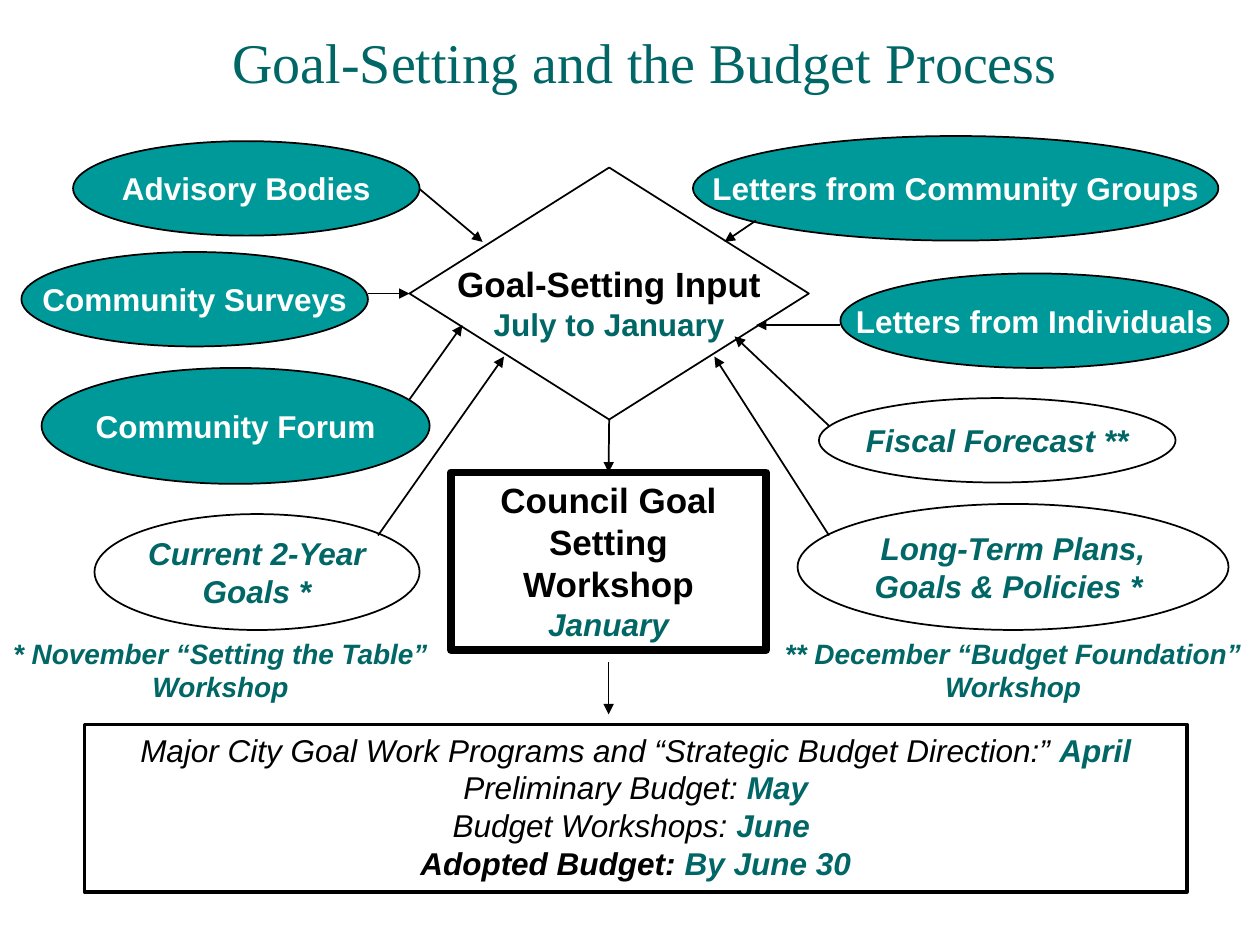
import pptx
import pptx.dml.color
import pptx.enum.shapes
import pptx.enum.text
import pptx.oxml
import pptx.oxml.ns
import pptx.util
from pptx.util import Inches

BLACK, WHITE, TEAL, DEEP_TEAL = "000000", "FFFFFF", "009999", "006666"
SHAPES = pptx.enum.shapes.MSO_SHAPE
ANCHOR = pptx.enum.text.MSO_ANCHOR
GROW = pptx.enum.text.MSO_AUTO_SIZE.SHAPE_TO_FIT_TEXT


def paint(color_format, hex_color):
    color_format.rgb = pptx.dml.color.RGBColor.from_string(hex_color)


def write(frame, paragraphs, **frame_format):
    for name, value in frame_format.items():
        setattr(frame, name, value)
    for number, runs in enumerate(paragraphs):
        paragraph = frame.add_paragraph() if number else frame.paragraphs[0]
        paragraph.alignment = pptx.enum.text.PP_ALIGN.CENTER
        for text, hex_color, size, font_format in runs:
            run = paragraph.add_run()
            run.text = text
            run.font.size = pptx.util.Pt(size)
            paint(run.font.color, hex_color)
            for name, value in ({"name": "Arial"} | font_format).items():
                setattr(run.font, name, value)


bold = {"bold": True}
italic = {"italic": True}
bold_italic = bold | italic

deck = pptx.Presentation()
deck.slide_width, deck.slide_height = Inches(10), Inches(7.5)
slide = deck.slides.add_slide(deck.slide_layouts[5])

title = slide.shapes.title
title_place = {"left": 0.83, "top": 0.17, "width": 8.58, "height": 0.63}
for name, value in title_place.items():
    setattr(title, name, Inches(value))
write(title.text_frame,
      [[("Goal-Setting and the Budget Process", DEEP_TEAL, 32, {"name": "Times New Roman"})]],
      word_wrap=True, vertical_anchor=ANCHOR.TOP, auto_size=GROW)

centred = {"word_wrap": False, "vertical_anchor": ANCHOR.MIDDLE}
growing = {"word_wrap": True, "vertical_anchor": ANCHOR.TOP, "auto_size": GROW}

public_inputs = [
    ("Advisory Bodies", 0.58, 1.12, 2.75, 0.75),
    ("Community Surveys", 0.17, 2, 2.75, 0.75),
    ("Community Forum", 0.33, 2.92, 3.08, 0.92),
    ("Letters from Individuals", 6.67, 2.17, 3.08, 0.75),
    ("Letters from Community Groups", 5.5, 1.08, 4.17, 0.83),
]
city_inputs = [
    (["Current 2-Year", "Goals *"], 0.75, 4.08, 2.58, 0.92),
    (["Fiscal Forecast **"], 6.5, 3.16, 2.83, 0.67),
    (["Long-Term Plans,", "Goals & Policies * "], 6.33, 4, 3.42, 1),
]

steps = [
    (SHAPES.FLOWCHART_DECISION, (3.25, 1.33, 3.17, 2), None, 1,
     [[("Goal-Setting Input", BLACK, 20, bold)],
      [("July to January", DEEP_TEAL, 18, bold)]],
     centred | {"margin_top": Inches(0.19)}),
    (SHAPES.RECTANGLE, (3.58, 3.75, 2.5, 1.41), None, 4.5,
     [[("Council Goal Setting", BLACK, 20, bold)],
      [("Workshop", BLACK, 20, bold)],
      [("January", DEEP_TEAL, 18, bold_italic)]],
     growing),
    (SHAPES.RECTANGLE, (0.67, 5.75, 8.75, 1.33), None, 2,
     [[(milestone, BLACK, 18, style), (date, DEEP_TEAL, 18, bold_italic)]
      for milestone, date, style in [
          ("Major City Goal Work Programs and “Strategic Budget Direction:” ", "April", italic),
          ("Preliminary Budget: ", "May", italic),
          ("Budget Workshops: ", "June ", italic),
          ("Adopted Budget: ", "By June 30", bold_italic)]],
     growing),
]
for text, *place in public_inputs:
    steps.append((SHAPES.OVAL, place, TEAL, 1, [[(text, WHITE, 18, bold)]], centred))
for lines, *place in city_inputs:
    steps.append((SHAPES.OVAL, place, None, 1,
                  [[(line, DEEP_TEAL, 18, bold_italic)] for line in lines], centred))

drawn = []
for kind, place, fill, weight, paragraphs, frame_format in steps:
    step = slide.shapes.add_shape(kind, *map(Inches, place))
    step.shadow.inherit = False
    if fill:
        step.fill.solid()
        paint(step.fill.fore_color, fill)
    else:
        step.fill.background()
    paint(step.line.color, BLACK)
    step.line.width = pptx.util.Pt(weight)
    write(step.text_frame, paragraphs, **frame_format)
    drawn.append(step)
goal_input, workshop = drawn[:2]

arrows = [
    (3.33, 1.5, 3.83, 1.92, None, None),
    (2.92, 2.33, 3.25, 2.33, None, (goal_input, 1)),
    (3.25, 3.17, 3.67, 2.58, None, None),
    (3, 4.25, 4, 2.83, None, None),
    (6, 1.75, 5.75, 1.92, None, None),
    (6.58, 4.25, 5.67, 2.83, None, None),
    (6.67, 2.58, 6, 2.58, None, None),
    (6.58, 3.38, 5.83, 2.67, None, None),
    (4.83, 3.33, 4.83, 3.75, (goal_input, 2), (workshop, 0)),
    (4.83, 5.25, 4.83, 5.67, None, None),
]
for *ends, source, target in arrows:
    arrow = slide.shapes.add_connector(
        pptx.enum.shapes.MSO_CONNECTOR.STRAIGHT, *map(Inches, ends))
    if source:
        arrow.begin_connect(*source)
    if target:
        arrow.end_connect(*target)
    paint(arrow.line.color, BLACK)
    arrow.line.width = pptx.util.Pt(1)
    properties = arrow.element.spPr
    head = pptx.oxml.parse_xml(
        f'<a:tailEnd {pptx.oxml.ns.nsdecls("a")} type="triangle"/>')
    properties.find(pptx.oxml.ns.qn("a:ln")).append(head)
    properties.append(pptx.oxml.parse_xml(
        f'<a:effectLst {pptx.oxml.ns.nsdecls("a")}/>'))

footnotes = [
    ("** December “Budget Foundation” Workshop", 6.08, 3.92),
    ("* November “Setting the Table” Workshop", 0, 3.5),
]
for text, left, width in footnotes:
    footnote = slide.shapes.add_textbox(
        Inches(left), Inches(5), Inches(width), Inches(0.64))
    write(footnote.text_frame, [[(text, DEEP_TEAL, 16, bold_italic)]], **growing)

deck.save("out.pptx")
